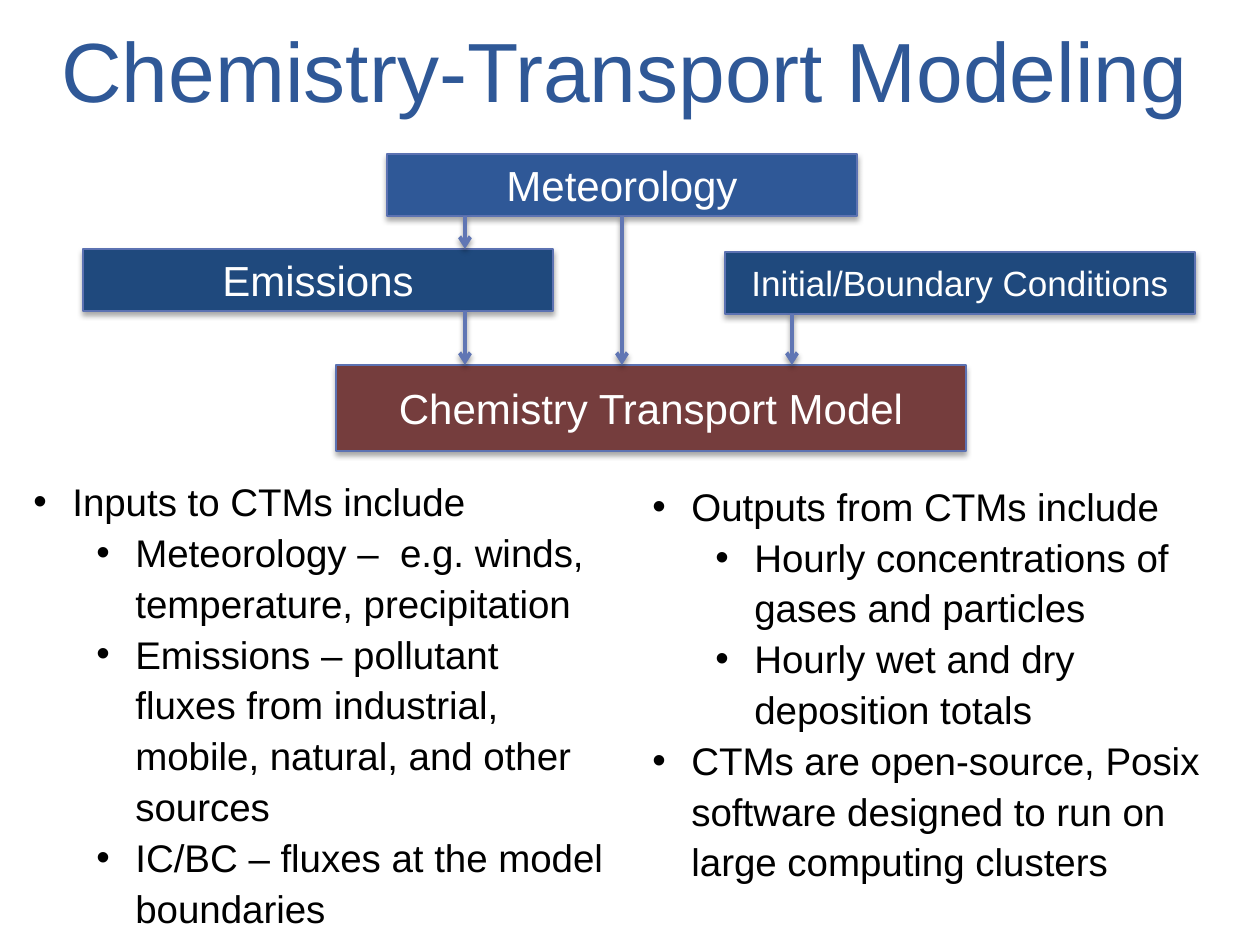
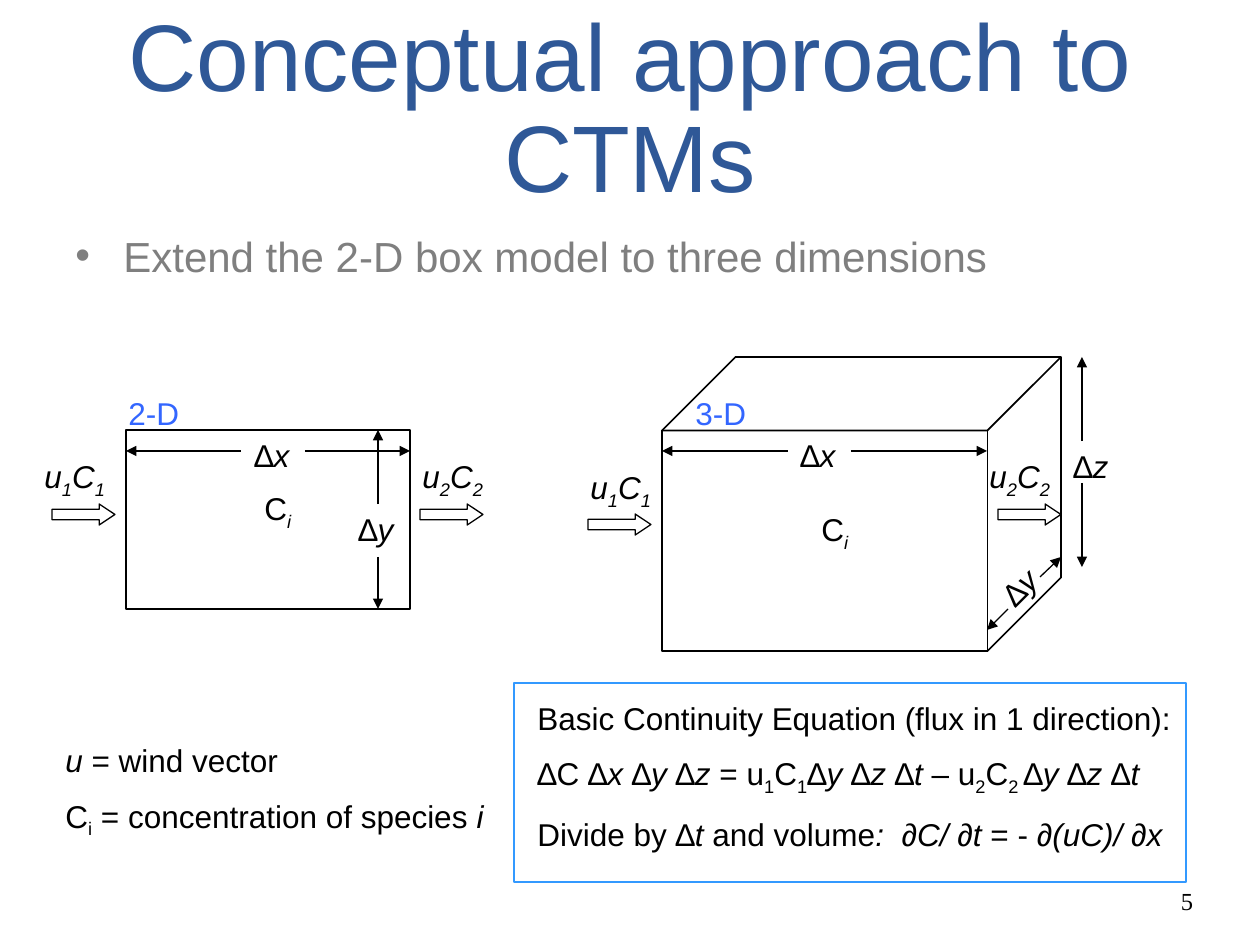
from dataclasses import dataclass
from itertools import pairwise

from lxml.etree import SubElement
from pptx import Presentation
from pptx.dml.color import RGBColor
from pptx.enum.shapes import MSO_CONNECTOR as Connector, MSO_SHAPE as Preset
from pptx.enum.text import MSO_ANCHOR as Anchor, MSO_AUTO_SIZE as AutoSize, PP_ALIGN as Align
from pptx.oxml.ns import qn
from pptx.util import Emu, Pt

PX_PER_INCH = 126
PAGE_SIZE = (1260, 945)
TITLE_ONLY = 5


@dataclass(frozen=True)
class Theme:
    font: str = "Arial"
    number_font: str = "Times New Roman"
    title: str = "2F5897"
    source_box: str = "1F497D"
    model_box: str = "753D3D"
    box_line: str = "5C72B2"
    flow_line: str = "6076B4"
    ink: str = "000000"
    paper: str = "FFFFFF"
    muted: str = "7F7F7F"
    caption: str = "3366FF"
    frame: str = "3399FF"
    title_leading: int = 58
    box_size: int = 24
    small_box_size: int = 20
    list_size: int = 22
    label_size: int = 18
    number_size: int = 14
    label_gap: int = 10


THEME = Theme()

FLOW = {
    "title": ("Chemistry-Transport Modeling", (10, 3, 1229, 123), 48),
    "boxes": {
        "meteorology": ("Meteorology", (387, 154, 470, 62), THEME.title, THEME.box_size),
        "emissions": ("Emissions", (83, 249, 470, 62), THEME.source_box, THEME.box_size),
        "conditions": ("Initial/Boundary Conditions", (725, 252, 470, 62),
                       THEME.source_box, THEME.small_box_size),
        "model": ("Chemistry Transport Model", (336, 365, 630, 86),
                  THEME.model_box, THEME.box_size),
    },
    "arrows": [
        (622, "meteorology", "model"),
        (465, "meteorology", "emissions"),
        (465, "emissions", "model"),
        (792, "conditions", "model"),
    ],
    "lists": [
        ((21, 472, 600, 469), [
            (0, 1.0, "Inputs to CTMs include"),
            (1, 1.1, "Meteorology –  e.g. winds, temperature, precipitation"),
            (1, 1.1, "Emissions – pollutant fluxes from industrial, mobile, "
                     "natural, and other sources"),
            (1, 1.1, "IC/BC – fluxes at the model boundaries"),
        ]),
        ((640, 472, 596, 422), [
            (0, 1.1, "Outputs from CTMs include"),
            (1, 1.1, "Hourly concentrations of gases and particles"),
            (1, 1.1, "Hourly wet and dry deposition totals"),
            (0, 1.1, "CTMs are open-source, Posix software designed to run on "
                     "large computing clusters"),
        ]),
    ],
}

CONCEPT = {
    "title": ("Conceptual approach to CTMs", (63, 53, 1134, 165), 54),
    "lead": ((63, 224, 1134, 80), "Extend the 2-D box model to three dimensions"),
    "number": ((1177, 876, 77, 50), "5"),
    "outlines": [
        (Preset.RECTANGLE, (126, 430, 284, 179), THEME.ink, 0.75),
        (Preset.CUBE, (662, 357, 399, 294), THEME.ink, 1),
        (Preset.RECTANGLE, (514, 683, 672, 199), THEME.frame, 0.75),
    ],
    "wind_arrows": [(52, 504), (420, 504), (588, 514), (998, 504)],
    "dimension_lines": [
        ((241, 451), (126, 451)), ((305, 451), (410, 451)),
        ((378, 504), (378, 430)), ((378, 557), (378, 609)),
        ((788, 451), (662, 451)), ((851, 451), (987, 451)),
        ((1008, 609), (987, 630)), ((1040, 577), (1061, 557)),
        ((1082, 441), (1082, 357)), ((1082, 483), (1082, 567)),
    ],
    "labels": [
        ("∆*x*", (242, 430, 74), 0), ("∆*y*", (346, 504, 74), 0),
        ("∆*x*", (788, 430, 74), 0), ("∆*y*", (987, 557, 74), 315),
        ("∆*z*", (1061, 441, 74), 0),
        ("*u~1~C~1~*", (32, 451, 105), 0), ("*u~2~C~2~*", (410, 451, 116), 0),
        ("*u~1~C~1~*", (578, 462, 95), 0), ("*u~2~C~2~*", (977, 451, 95), 0),
        ("C*~i~*", (252, 483, 63), 0), ("C*~i~*", (809, 504, 63), 0),
    ],
    "captions": [("2-D", (116, 388, 95)), ("3-D", (683, 388, 95))],
    "notes": [
        ((53, 735, 525, 107), [
            "*u* = wind vector",
            "C~i~ = concentration of species *i*",
        ]),
        ((525, 693, 683, 164), [
            "Basic Continuity Equation (flux in 1 direction):",
            "∆C ∆*x *∆*y *∆*z* = u~1~C~1~∆*y *∆*z *∆*t* – u~2~C~2 ~∆*y *∆*z *∆*t*",
            "Divide by ∆*t *and volume*:  ∂C/ ∂t* = - *∂(uC)/ ∂x*",
        ]),
    ],
}

LABEL_HEIGHT = 50
WIND_ARROW = (63, 21)
INDENT, LEVEL_STEP = 39, 63


def px(length):
    return Emu(round(length * 914400 / PX_PER_INCH))


def set_all(target, values):
    for name, value in values.items():
        setattr(target, name, value)


def rgb(color):
    return RGBColor.from_string(color)


def place(shape, bounds):
    set_all(shape, dict(zip(("left", "top", "width", "height"), map(px, bounds))))


def set_effects(shape, shadow=None):
    properties = shape._element.spPr
    effects = properties.find(qn("a:effectLst"))
    if effects is None:
        effects = SubElement(properties, qn("a:effectLst"))
    if shadow:
        blur, distance, opacity = shadow
        outer = SubElement(effects, qn("a:outerShdw"), blurRad=str(Pt(blur)),
                           dist=str(Pt(distance)), dir="5400000", rotWithShape="0")
        color = SubElement(outer, qn("a:srgbClr"), val=THEME.ink)
        SubElement(color, qn("a:alpha"), val=str(opacity * 1000))


def write(para, text, size, color, font=THEME.font):
    for i, slanted in enumerate(text.split("*")):
        for j, piece in enumerate(slanted.split("~")):
            if not piece:
                continue
            span = para.add_run()
            span.text = piece
            set_all(span.font, {"name": font, "size": Pt(size), "italic": i % 2 == 1})
            span.font.color.rgb = rgb(color)
            if j % 2:
                span._r.get_or_add_rPr().set("baseline", "-25000")


def add_paragraphs(frame, texts, size, color, font=THEME.font, gap=0):
    for index, text in enumerate(texts):
        para = frame.add_paragraph() if index else frame.paragraphs[0]
        if index:
            para.space_before = Pt(gap)
        write(para, text, size, color, font)
    return frame.paragraphs


def add_text(page, bounds, texts, size=THEME.label_size, color=THEME.ink, **options):
    box = page.shapes.add_textbox(*map(px, bounds))
    box.text_frame.word_wrap = True
    add_paragraphs(box.text_frame, texts, size, color, **options)
    return box


def add_bullet(para, indent, level=0):
    properties = para._p.get_or_add_pPr()
    properties.set("marL", str(px(indent + level * LEVEL_STEP)))
    properties.set("indent", str(-px(indent)))
    SubElement(properties, qn("a:buFont"), typeface=THEME.font)
    SubElement(properties, qn("a:buChar"), char="•")


def add_preset(page, preset, bounds, line_color, line_width, fill=None):
    shape = page.shapes.add_shape(preset, *map(px, bounds))
    shape.shadow.inherit = False
    if fill:
        shape.fill.solid()
        shape.fill.fore_color.rgb = rgb(fill)
    else:
        shape.fill.background()
    shape.line.color.rgb = rgb(line_color)
    shape.line.width = Pt(line_width)
    return shape


def add_arrow(page, start, end, color, width, head, shadow=None):
    arrow = page.shapes.add_connector(Connector.STRAIGHT, *map(px, start + end))
    arrow.line.color.rgb = rgb(color)
    arrow.line.width = Pt(width)
    SubElement(arrow.line._get_or_add_ln(), qn("a:tailEnd"), type=head)
    set_effects(arrow, shadow)


def add_page(deck, title):
    text, bounds, size = title
    page = deck.slides.add_slide(deck.slide_layouts[TITLE_ONLY])
    heading = page.shapes.title
    place(heading, bounds)
    set_all(heading.text_frame, {"vertical_anchor": Anchor.BOTTOM, "word_wrap": True,
                                 "auto_size": AutoSize.NONE})
    para = heading.text_frame.paragraphs[0]
    set_all(para, {"alignment": Align.CENTER, "line_spacing": Pt(THEME.title_leading)})
    write(para, text, size, THEME.title)
    return page


def build_flow(deck):
    page = add_page(deck, FLOW["title"])
    boxes = FLOW["boxes"]
    for text, bounds, fill, size in boxes.values():
        box = add_preset(page, Preset.FLOWCHART_PROCESS, bounds, THEME.box_line, 0.75, fill)
        set_effects(box, (3.1, 1.8, 35))
        box.text_frame.vertical_anchor = Anchor.MIDDLE
        para = box.text_frame.paragraphs[0]
        para.alignment = Align.CENTER
        write(para, text, size, THEME.paper)
    for x, source, target in FLOW["arrows"]:
        _, top, _, height = boxes[source][1]
        add_arrow(page, (x, top + height), (x, boxes[target][1][1]),
                  THEME.flow_line, 2.25, "arrow", (3.1, 1.6, 38))
    for bounds, items in FLOW["lists"]:
        box = add_text(page, bounds, [text for _, _, text in items], THEME.list_size)
        for para, (level, spacing, _) in zip(box.text_frame.paragraphs, items):
            set_all(para, {"level": level, "line_spacing": spacing})
            add_bullet(para, INDENT, level)


def build_concept(deck):
    page = add_page(deck, CONCEPT["title"])
    bounds, lead = CONCEPT["lead"]
    box = add_text(page, bounds, [lead], THEME.box_size, THEME.muted)
    add_bullet(box.text_frame.paragraphs[0], 48)
    for outline in CONCEPT["outlines"]:
        add_preset(page, *outline)
    for corner in CONCEPT["wind_arrows"]:
        arrow = add_preset(page, Preset.RIGHT_ARROW, corner + WIND_ARROW, THEME.ink, 0.75)
        arrow.adjustments[0], arrow.adjustments[1] = 0.5, 0.75
    for start, end in CONCEPT["dimension_lines"]:
        add_arrow(page, start, end, THEME.ink, 0.75, "triangle")
    for text, bounds, angle in CONCEPT["labels"]:
        add_text(page, bounds + (LABEL_HEIGHT,), [text]).rotation = angle
    for text, bounds in CONCEPT["captions"]:
        add_text(page, bounds + (LABEL_HEIGHT,), [text], color=THEME.caption)
    for bounds, texts in CONCEPT["notes"]:
        add_text(page, bounds, texts, gap=THEME.label_gap)
    bounds, number = CONCEPT["number"]
    box = add_text(page, bounds, [number], THEME.number_size, font=THEME.number_font)
    set_all(box.text_frame, {"vertical_anchor": Anchor.MIDDLE, "margin_left": px(4),
                             "margin_right": px(6)})


def main():
    deck = Presentation()
    deck.slide_width, deck.slide_height = map(px, PAGE_SIZE)
    build_flow(deck)
    build_concept(deck)
    deck.save("out.pptx")


if __name__ == "__main__":
    main()
